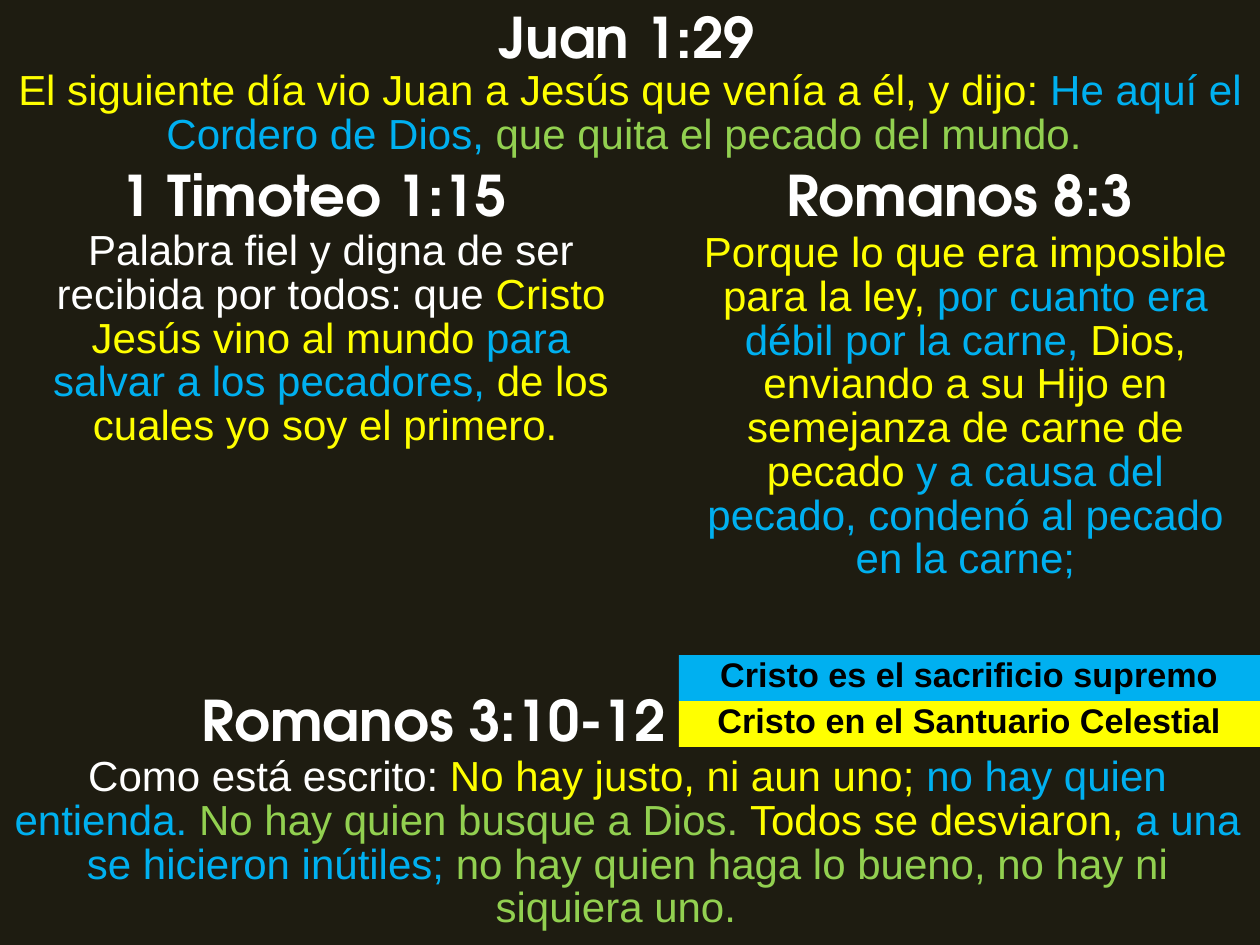
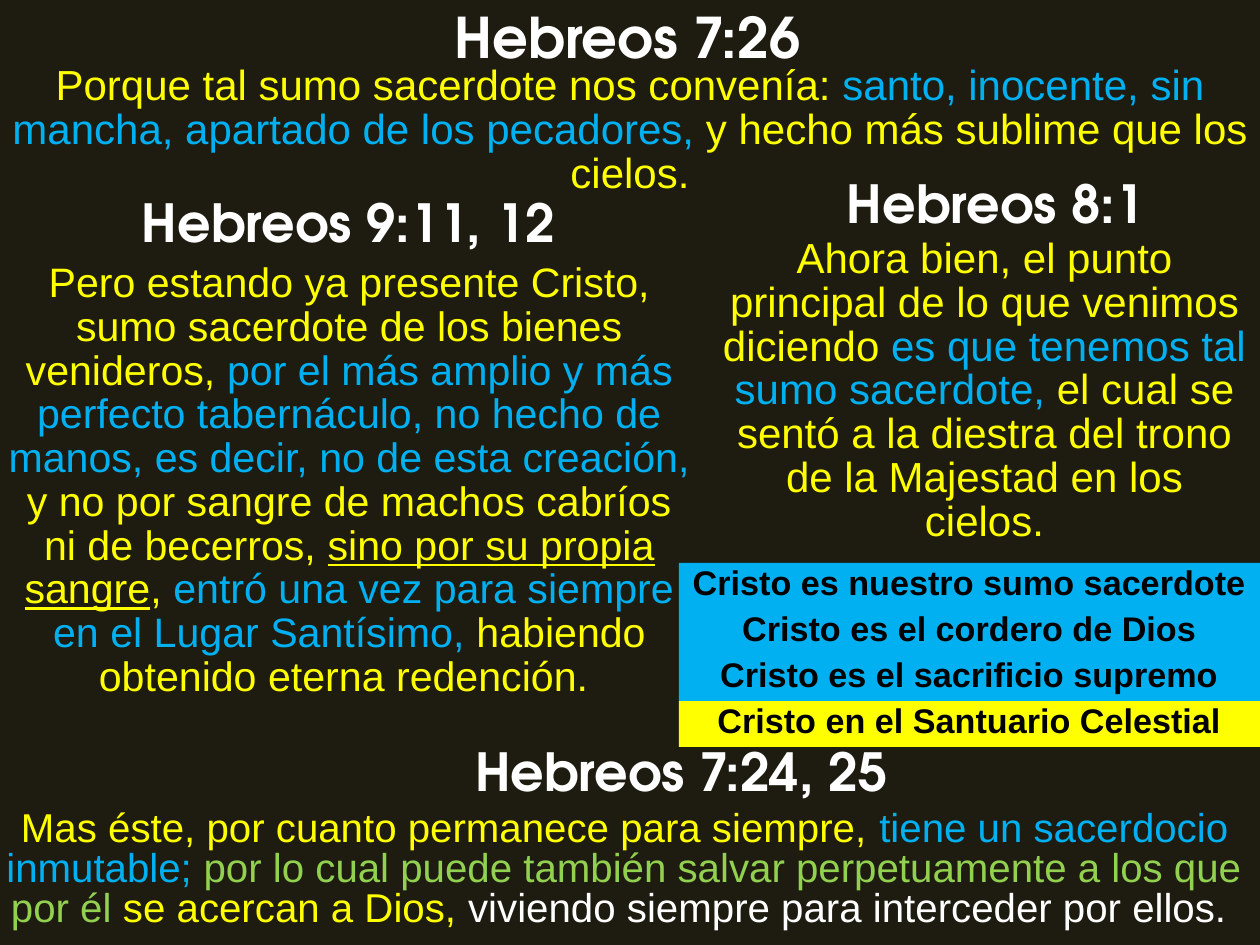
from dataclasses import dataclass

from pptx import Presentation, util as u
from pptx.dml.color import RGBColor
from pptx.enum import shapes, text

PX = 914400 // 126  # EMU in one px


@dataclass(frozen=True)
class Theme:
    back: str = "1E1C11"
    white: str = "FFFFFF"
    black: str = "000000"
    gold: str = "FFFF00"
    blue: str = "00B0F0"
    green: str = "92D050"
    head_font: str = "TeX Gyre Adventor"
    body_font: str = "Arial"
    big: float = 32
    mid: float = 30
    verse: float = 24
    snug: float = 23.5
    small: float = 23
    label: float = 19.5
    lead: float = 25
    tight: float = 23
    label_lead: float = 19


T = Theme()
W, G, B, N = T.white, T.gold, T.blue, T.green


def place(shape, box):
    shape.left, shape.top, shape.width, shape.height = (n * PX for n in box)


def write(shape, runs, font, size, lead=None, bold=False, wrap=True):
    """Fill a shape with one centred paragraph of (colour, words[, underline]) runs."""
    frame = shape.text_frame
    frame.word_wrap = wrap
    frame.auto_size = text.MSO_AUTO_SIZE.NONE
    frame.vertical_anchor = text.MSO_ANCHOR.TOP
    para = frame.paragraphs[0]
    para.alignment = text.PP_ALIGN.CENTER
    if lead:
        para.line_spacing = u.Pt(lead)
    para.font.name, para.font.size, para.font.bold = font, u.Pt(size), bold
    for tone, words, *line in runs:
        run = para.add_run()
        run.text = words
        run.font.color.rgb = RGBColor.from_string(tone)
        if line:
            run.font.underline = True


# Each passage: heading, its box and size; verse box, size, line pitch and runs.
# The first passage of a slide gives the slide title.
juan = [
    ("Juan 1:29", (481, -4, 292, 81), T.big,
     (0, 64, 1260, 101), T.verse, T.lead, [
        (G, "El siguiente día vio Juan a Jesús que venía a él, y dijo: "),
        (B, "He aquí el Cordero de Dios, "),
        (N, "que quita el pecado del mundo. ")]),
    ("1 Timoteo 1:15", (100, 154, 428, 81), T.big,
     (35, 224, 592, 233), T.verse, T.lead, [
        (W, "Palabra fiel y digna de ser recibida por todos: que "),
        (G, "Cristo Jesús vino al mundo "),
        (B, "para salvar a los pecadores, "),
        (G, "de los cuales yo soy el primero. ")]),
    ("Romanos 8:3", (769, 154, 381, 81), T.big,
     (675, 226, 581, 367), T.verse, T.lead, [
        (G, "Porque lo que era imposible para la ley, "),
        (B, "por cuanto era débil por la carne, "),
        (G, "Dios, enviando a su Hijo en semejanza de carne de pecado "),
        (B, "y a causa del pecado, condenó al pecado en la carne;")]),
    ("Romanos 3:10-12", (184, 679, 500, 81), T.big,
     (0, 750, 1255, 189), T.verse, T.lead, [
        (W, "Como está escrito: "),
        (G, "No hay justo, ni aun uno; "),
        (B, "no hay quien entienda. "),
        (N, "No hay quien busque a Dios. "),
        (G, "Todos se desviaron, "),
        (B, "a una se hicieron inútiles; "),
        (N, "no hay quien haga lo bueno, no hay ni siquiera uno.  ")]),
]
hebreos = [
    ("Hebreos 7:26", (432, -4, 391, 81), T.big,
     (0, 59, 1260, 145), T.verse, T.lead, [
        (G, "Porque tal sumo sacerdote nos convenía: "),
        (B, "santo, inocente, sin mancha, apartado de los pecadores, "),
        (G, "y hecho más sublime que los cielos.")]),
    ("Hebreos 9:11, 12", (118, 184, 461, 77), T.mid,
     (-5, 256, 709, 455), T.snug, T.lead, [
        (G, "Pero estando ya presente Cristo, sumo sacerdote de los bienes venideros, "),
        (B, "por el más amplio y más perfecto tabernáculo, no hecho de manos, "
            "es decir, no de esta creación, "),
        (G, "y no por sangre de machos cabríos ni de becerros, "),
        (G, "sino por su propia sangre", True),
        (G, ", "),
        (B, "entró una vez para siempre en el Lugar Santísimo, "),
        (G, "habiendo obtenido eterna redención. ")]),
    ("Hebreos 8:1", (828, 165, 336, 77), T.mid,
     (709, 232, 551, 323), T.verse, T.lead, [
        (G, "Ahora bien, el punto principal de lo que venimos diciendo "),
        (B, "es que tenemos tal sumo sacerdote, "),
        (G, "el cual se sentó a la diestra del trono de la Majestad en los cielos.")]),
    ("Hebreos 7:24, 25", (451, 733, 461, 77), T.mid,
     (-25, 804, 1300, 135), T.small, T.tight, [
        (G, "Mas éste, por cuanto permanece para siempre, "),
        (B, "tiene un sacerdocio inmutable; "),
        (N, "por lo cual puede también salvar perpetuamente a los que por él "),
        (G, "se acercan a Dios, "),
        (W, "viviendo siempre para interceder por ellos. ")]),
]

# Theme bands stack upward from the lowest one.
bands = [
    (G, "Cristo en el Santuario Celestial"),
    (B, "Cristo es el sacrificio supremo"),
    (B, "Cristo es el cordero de Dios"),
    (B, "Cristo es nuestro sumo sacerdote"),
]
BAND_LEFT, BAND_TOP, BAND_WIDE, BAND_HIGH = 679, 701, 581, 46

deck = Presentation()
deck.slide_width, deck.slide_height = u.Inches(10), u.Inches(7.5)
fill = deck.slide_master.background.fill
fill.solid()
fill.fore_color.rgb = RGBColor.from_string(T.back)

for verses, count in ((juan, 2), (hebreos, 4)):
    slide = deck.slides.add_slide(deck.slide_layouts[5])
    for i, (name, spot, size, box, body, lead, runs) in enumerate(verses):
        head = slide.shapes.add_textbox(0, 0, 0, 0) if i else slide.shapes.title
        place(head, spot)
        write(head, [(W, name)], T.head_font, size, bold=True, wrap=False)
        verse = slide.shapes.add_textbox(0, 0, 0, 0)
        place(verse, box)
        write(verse, runs, T.body_font, body, lead)

    for i, (tone, words) in enumerate(bands[:count]):
        band = slide.shapes.add_shape(shapes.MSO_SHAPE.RECTANGLE, 0, 0, 0, 0)
        place(band, (BAND_LEFT, BAND_TOP - i * BAND_HIGH, BAND_WIDE, BAND_HIGH))
        band.shadow.inherit = False
        band.fill.solid()
        band.fill.fore_color.rgb = RGBColor.from_string(tone)
        band.line.fill.background()
        write(band, [(T.black, words)], T.body_font, T.label, T.label_lead, bold=True)

deck.save("out.pptx")
